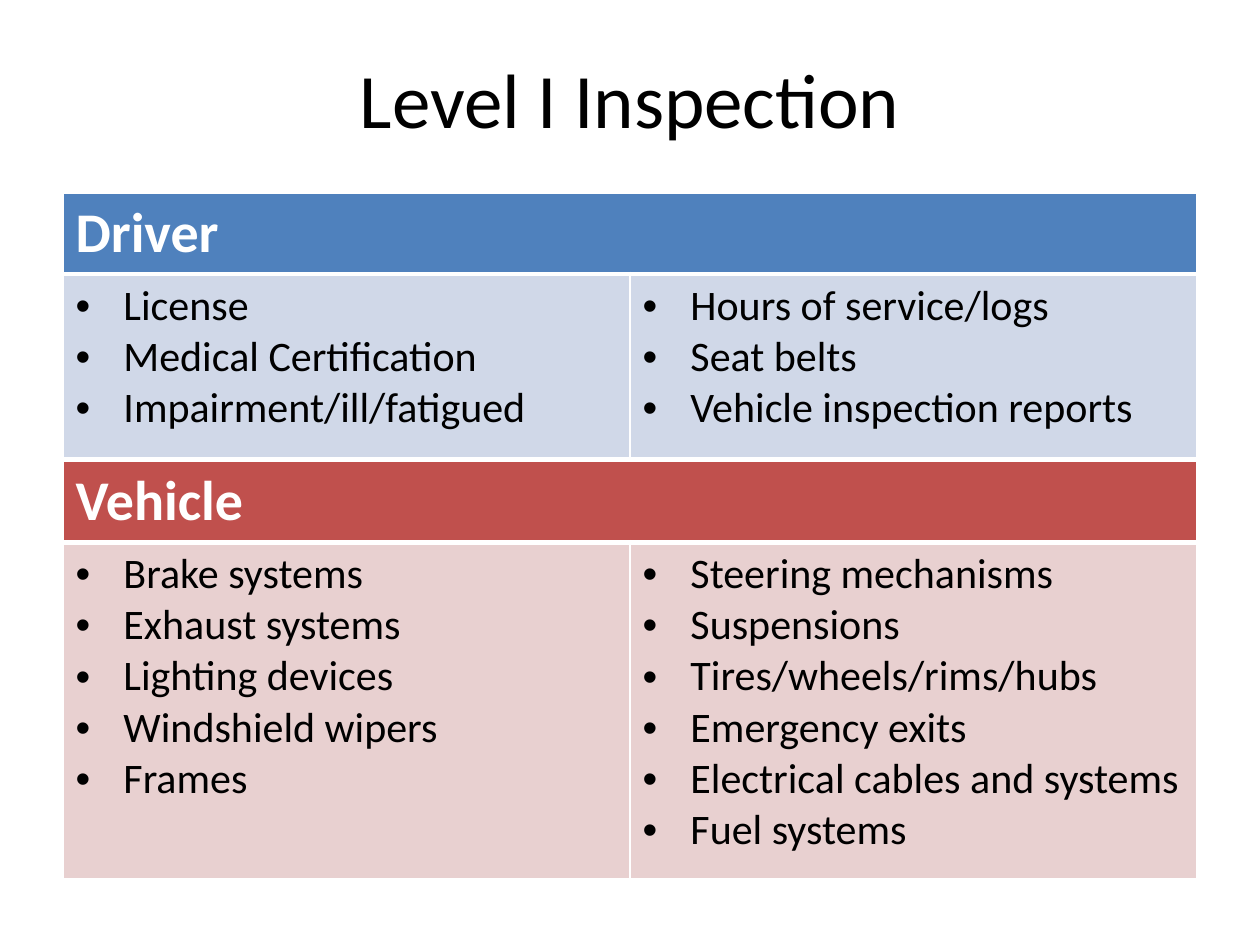
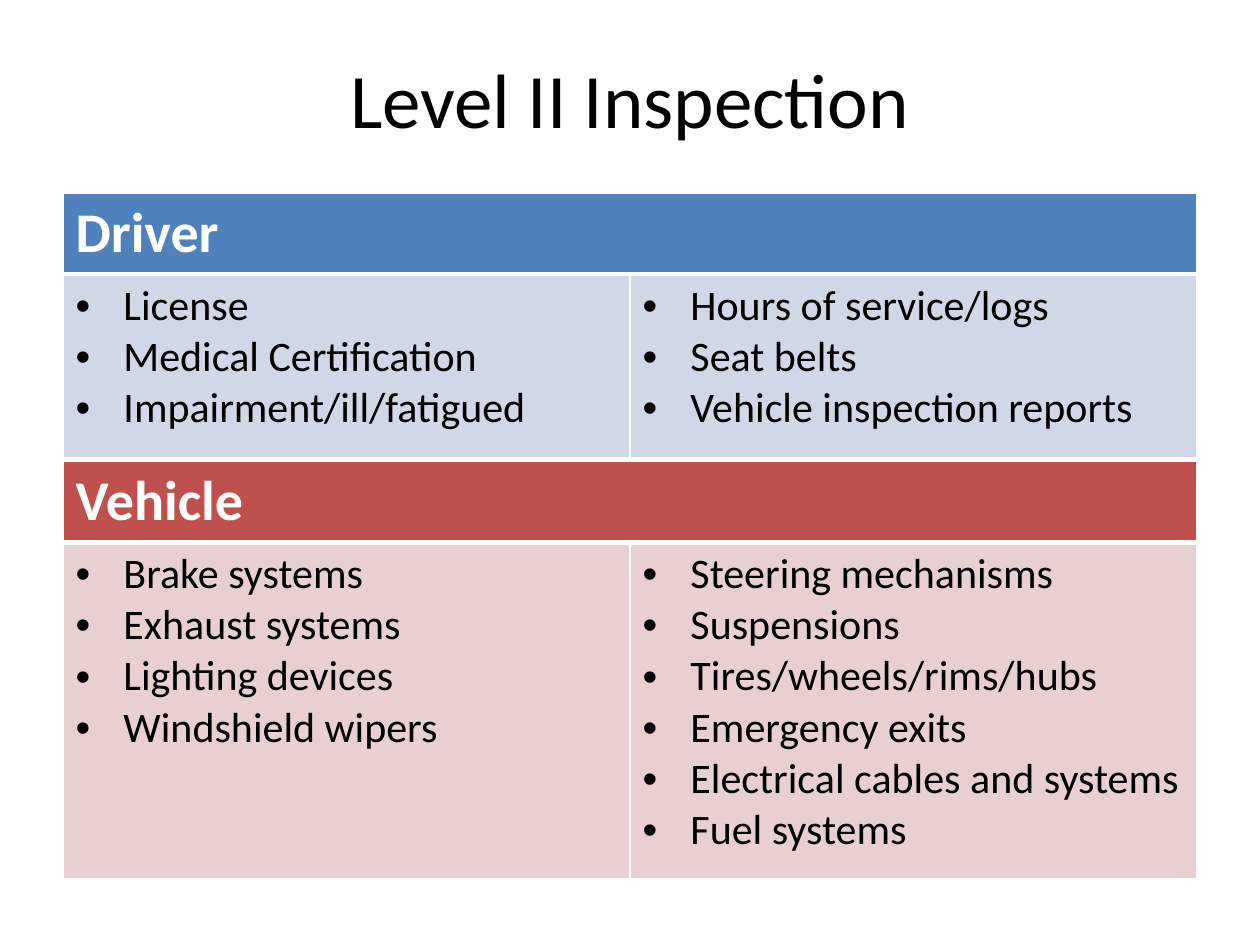
"""Build two slides that list what Level I and Level II inspections cover."""
import pptx
import pptx.dml.color
import pptx.enum.text
import pptx.oxml.ns
import pptx.util
from lxml import etree

Inches = pptx.util.Inches
Pt = pptx.util.Pt
qn = pptx.oxml.ns.qn

COLORS = {
    "text": "000000",
    "white": "FFFFFF",
    "driver": "4F81BD",
    "driver_light": "D0D8E8",
    "vehicle": "C0504D",
    "vehicle_light": "E8D0D0",
}
FONT = "Calibri"
LEFT, WIDTH = 0.5, 9
HEADER_HEIGHT = 0.64
BULLET_INDENT = Inches(0.38)

driver_items = [
    ["License", "Medical Certification", "Impairment/ill/fatigued"],
    ["Hours of service/logs", "Seat belts", "Vehicle inspection reports"],
]
vehicle_left = ["Brake systems", "Exhaust systems", "Lighting devices", "Windshield wipers"]
vehicle_right = ["Steering mechanisms", "Suspensions", "Tires/wheels/rims/hubs",
                 "Emergency exits", "Electrical cables and systems", "Fuel systems"]
inspections = [
    ("Level I Inspection", [vehicle_left + ["Frames"], vehicle_right]),
    ("Level II Inspection", [vehicle_left, vehicle_right]),
]


def style_font(font, size, color, bold=False):
    font.name = FONT
    font.size = Pt(size)
    font.bold = bold
    font.color.rgb = pptx.dml.color.RGBColor.from_string(COLORS[color])


def style_cell(cell, fill, border_widths):
    cell.fill.solid()
    cell.fill.fore_color.rgb = pptx.dml.color.RGBColor.from_string(COLORS[fill])
    properties = cell._tc.get_or_add_tcPr()
    for position, (side, width) in enumerate(zip("LRTB", border_widths)):
        line = etree.Element(qn(f"a:ln{side}"), w=str(Pt(width)))
        solid = etree.SubElement(line, qn("a:solidFill"))
        etree.SubElement(solid, qn("a:srgbClr"), val=COLORS["white"])
        properties.insert(position, line)


presentation = pptx.Presentation()
presentation.slide_width = Inches(10)
presentation.slide_height = Inches(7.5)

for title_text, vehicle_items in inspections:
    slide = presentation.slides.add_slide(presentation.slide_layouts[5])
    title = slide.shapes.title
    title.left, title.top = Inches(LEFT), Inches(0.15)
    title.width, title.height = Inches(WIDTH), Inches(1.25)
    title.text_frame.text = title_text
    title.text_frame.vertical_anchor = pptx.enum.text.MSO_ANCHOR.MIDDLE
    title_paragraph = title.text_frame.paragraphs[0]
    title_paragraph.alignment = pptx.enum.text.PP_ALIGN.CENTER
    style_font(title_paragraph.font, 44, "text")

    for heading, color, top, body_height, columns in [
        ("Driver", "driver", 1.53, 1.46, driver_items),
        ("Vehicle", "vehicle", 3.66, 2.67, vehicle_items),
    ]:
        table = slide.shapes.add_table(
            2, 2, Inches(LEFT), Inches(top), Inches(WIDTH), Inches(HEADER_HEIGHT + body_height)
        ).table
        table.horz_banding = False
        table.rows[0].height = Inches(HEADER_HEIGHT)
        table.rows[1].height = Inches(body_height)

        header = table.cell(0, 0)
        header.merge(table.cell(0, 1))
        header.text = heading
        header.vertical_anchor = pptx.enum.text.MSO_ANCHOR.MIDDLE
        style_font(header.text_frame.paragraphs[0].font, 32, "white", bold=True)

        for column, items in enumerate(columns):
            style_cell(table.cell(0, column), color, (1, 1, 1, 3))
            body = table.cell(1, column)
            style_cell(body, f"{color}_light", (1, 1, 3, 1))
            body.text = "\n".join(items)
            for paragraph in body.text_frame.paragraphs:
                properties = paragraph._p.get_or_add_pPr()
                properties.set("marL", str(BULLET_INDENT))
                properties.set("indent", str(-BULLET_INDENT))
                etree.SubElement(properties, qn("a:buFont"), typeface="Arial")
                etree.SubElement(properties, qn("a:buChar"), char="•")
                style_font(paragraph.font, 24, "text")

presentation.save("out.pptx")
